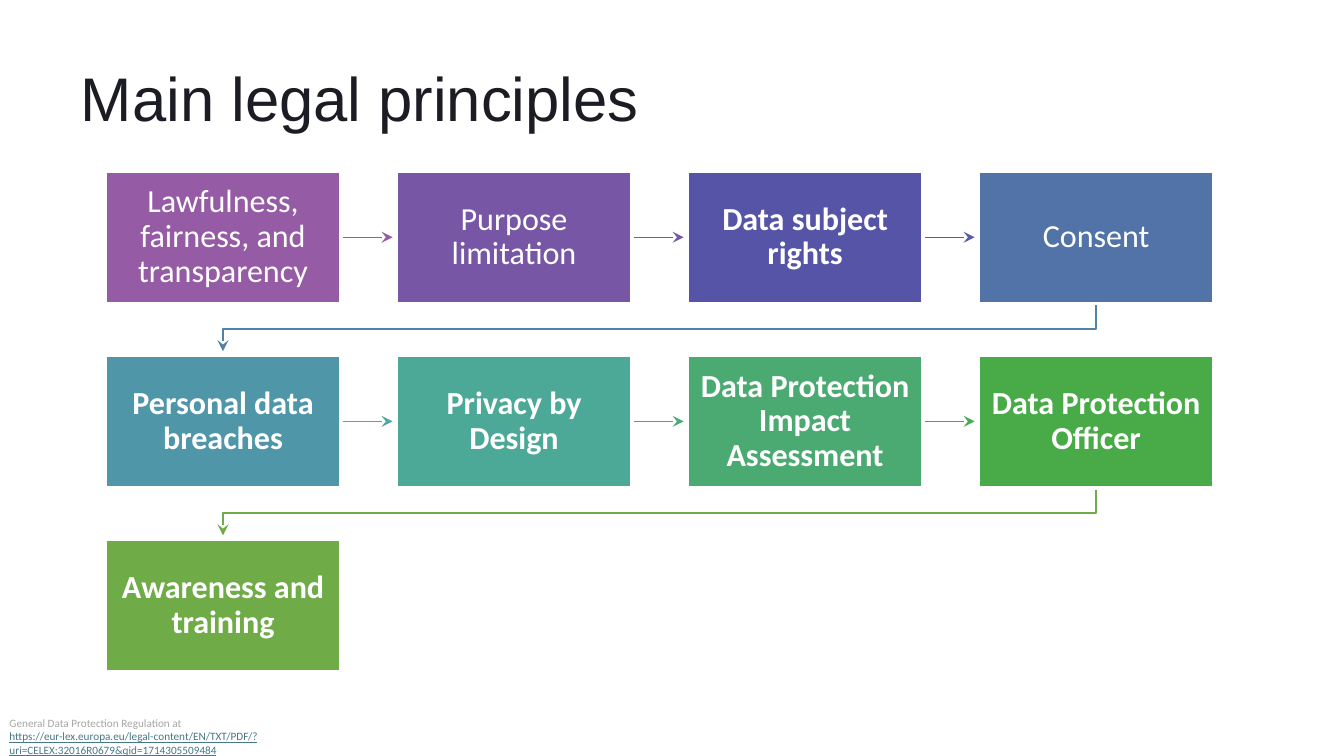
"""Builds the slide that walks through the main legal principles of data protection."""
from dataclasses import dataclass

from lxml import etree
from pptx import Presentation
from pptx import util as u
from pptx.dml.color import RGBColor
from pptx.enum import shapes, text
from pptx.oxml import ns


@dataclass(frozen=True)
class Theme:
    heading_font: str = "Arial"
    body_font: str = "Calibri"
    heading_size: float = 33
    step_size: float = 17.2
    source_size: float = 6
    heading: str = "1C1C25"
    white: str = "FFFFFF"
    source: str = "A6A6A6"
    link: str = "467886"
    border_width: float = 2
    arrow_width: float = 0.75


@dataclass(frozen=True)
class Grid:
    columns: int = 4
    left: float = 1.98
    top: float = 3.23
    width: float = 4.47
    height: float = 2.51
    column_pitch: float = 5.5
    row_pitch: float = 3.48
    arrow_length: float = 0.97
    elbow_drop: float = 0.48
    elbow_height: float = 0.9

    def corner(self, index: int) -> tuple[float, float]:
        row, column = divmod(index, self.columns)
        return self.left + column * self.column_pitch, self.top + row * self.row_pitch

    def route(self, index: int) -> list[tuple[float, float]]:
        x, y = self.corner(index)
        if (index + 1) % self.columns:
            start, middle = x + self.width, y + self.height / 2
            return [(start, middle), (start + self.arrow_length, middle)]
        centre, first = x + self.width / 2, self.left + self.width / 2
        bottom = y + self.height
        turn = bottom + self.elbow_drop
        return [(centre, bottom), (centre, turn), (first, turn),
                (first, bottom + self.elbow_height)]


@dataclass(frozen=True)
class Step:
    label: str
    fill: str
    arrow: str = ""
    bold: bool = True


THEME = Theme()
GRID = Grid()
STEPS = [
    Step("Lawfulness, fairness, and transparency", "965BA5", "965BA5", False),
    Step("Purpose limitation", "7757A5", "7357A5", False),
    Step("Data subject rights", "5554A6", "545DA6"),
    Step("Consent", "5273A7", "5182A8", False),
    Step("Personal data breaches", "4F96A8", "4EA8A6"),
    Step("Privacy by Design", "4DA997", "4CA97C"),
    Step("Data Protection Impact Assessment", "4BAA71", "48AB4F"),
    Step("Data Protection Officer", "49AB48", "6FAB46"),
    Step("Awareness and training", "6FAB46"),
]


def add_run(paragraph, wording: str, font: str, size: float, colour: str,
            bold: bool = False, underline: bool = False) -> None:
    run = paragraph.add_run()
    run.text = wording
    run.font.name = font
    run.font.size = u.Pt(size)
    run.font.color.rgb = RGBColor.from_string(colour)
    run.font.bold = bold
    run.font.underline = underline


def set_frame(frame, anchor, side: float, end: float) -> None:
    frame.word_wrap = True
    frame.vertical_anchor = anchor
    frame.margin_left = frame.margin_right = u.Cm(side)
    frame.margin_top = frame.margin_bottom = u.Cm(end)


def add_text_box(slide, left: float, top: float, width: float, height: float, anchor):
    frame = slide.shapes.add_textbox(u.Cm(left), u.Cm(top), u.Cm(width), u.Cm(height)).text_frame
    set_frame(frame, anchor, 0.18, 0.1)
    return frame


def add_arrow(slide, route: list[tuple[float, float]], colour: str) -> None:
    points = [(u.Cm(x), u.Cm(y)) for x, y in route]
    if len(points) == 2:
        arrow = slide.shapes.add_connector(shapes.MSO_CONNECTOR.STRAIGHT, *points[0], *points[1])
    else:
        builder = slide.shapes.build_freeform(*points[0])
        builder.add_line_segments(points[1:], close=False)
        arrow = builder.convert_to_shape()
        arrow.fill.background()
    arrow.line.color.rgb = RGBColor.from_string(colour)
    arrow.line.width = u.Pt(THEME.arrow_width)
    properties = arrow.element.spPr
    etree.SubElement(properties.find(ns.qn("a:ln")), ns.qn("a:tailEnd"), type="stealth")
    etree.SubElement(properties, ns.qn("a:effectLst"))


def add_step(slide, index: int, step: Step) -> None:
    left, top = GRID.corner(index)
    box = slide.shapes.add_shape(shapes.MSO_SHAPE.RECTANGLE, u.Cm(left), u.Cm(top),
                                 u.Cm(GRID.width), u.Cm(GRID.height))
    box.shadow.inherit = False
    box.fill.solid()
    box.fill.fore_color.rgb = RGBColor.from_string(step.fill)
    box.line.color.rgb = RGBColor.from_string(THEME.white)
    box.line.width = u.Pt(THEME.border_width)
    set_frame(box.text_frame, text.MSO_ANCHOR.MIDDLE, 0.22, 0.22)
    label = box.text_frame.paragraphs[0]
    label.alignment = text.PP_ALIGN.CENTER
    label.line_spacing = 0.9
    add_run(label, step.label, THEME.body_font, THEME.step_size, THEME.white, step.bold)


def main() -> None:
    deck = Presentation()
    deck.slide_width, deck.slide_height = u.Cm(25.4), u.Cm(14.29)
    slide = deck.slides.add_slide(deck.slide_layouts[6])

    heading = add_text_box(slide, 1.35, 0.97, 20.78, 1.68, text.MSO_ANCHOR.BOTTOM).paragraphs[0]
    heading.line_spacing = 0.9
    add_run(heading, "Main legal principles", THEME.heading_font, THEME.heading_size, THEME.heading)

    for index, step in enumerate(STEPS):
        if step.arrow:
            add_arrow(slide, GRID.route(index), step.arrow)
        add_step(slide, index, step)

    source_frame = add_text_box(slide, 0, 13.44, 7.39, 0.71, text.MSO_ANCHOR.TOP)
    source_frame.auto_size = text.MSO_AUTO_SIZE.SHAPE_TO_FIT_TEXT
    source = source_frame.paragraphs[0]
    add_run(source, "General Data Protection Regulation at ",
            THEME.body_font, THEME.source_size, THEME.source)
    add_run(source, "https://eur-lex.europa.eu/legal-content/EN/TXT/PDF/?uri=CELEX:32016R0679&qid=1714305509484",
            THEME.body_font, THEME.source_size, THEME.link, underline=True)

    deck.save("out.pptx")


if __name__ == "__main__":
    main()
